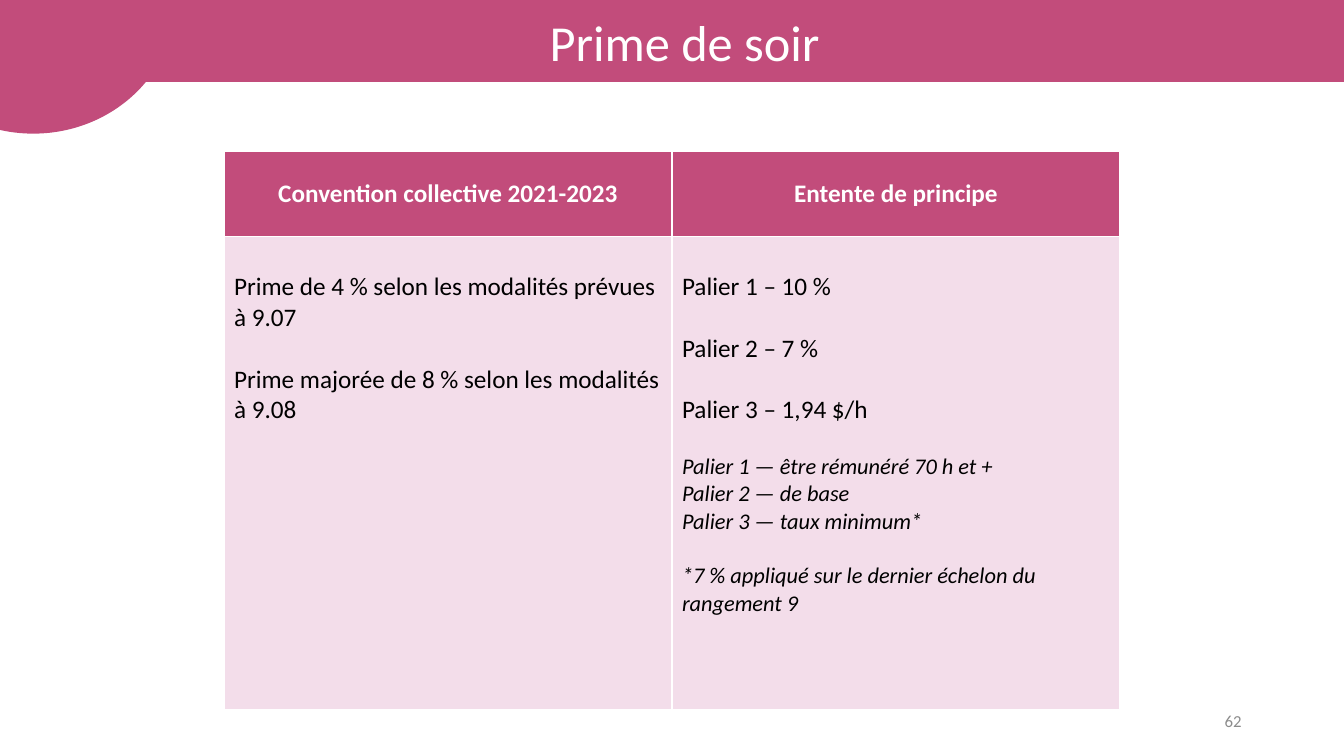
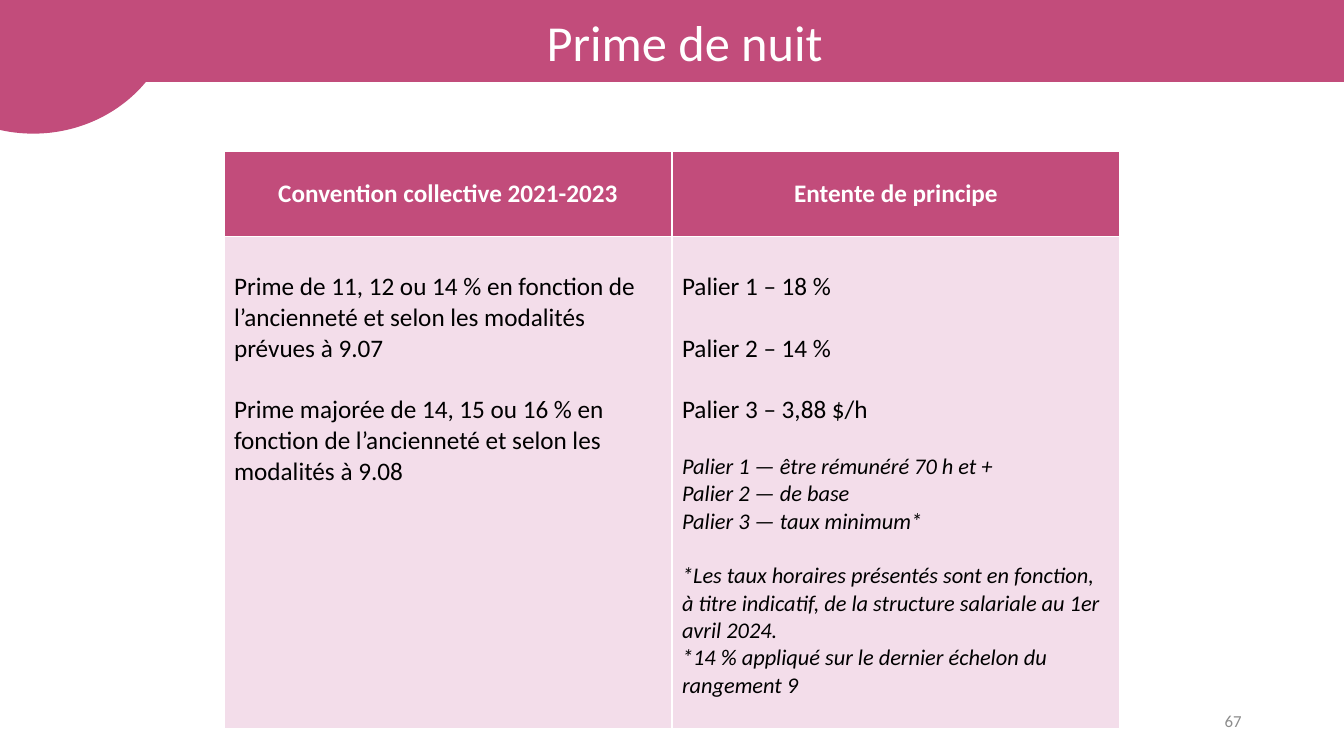
from pptx import Presentation
from pptx.dml.color import RGBColor
from pptx.enum.shapes import MSO_SHAPE
from pptx.enum.text import MSO_ANCHOR, MSO_AUTO_SIZE, PP_ALIGN
from pptx.util import Cm, Pt

ROSE = RGBColor(0xC2, 0x4C, 0x7B)
PALE_ROSE = RGBColor(0xF3, 0xDD, 0xEA)
WHITE = RGBColor(0xFF, 0xFF, 0xFF)
BLACK = RGBColor(0, 0, 0)
GREY = RGBColor(0x8C, 0x8C, 0x8C)
FONT = "Calibri"
SLIDE_WIDTH, SLIDE_HEIGHT = Cm(33.87), Cm(19.05)

TITLE_ONLY = 5
TERM_SIZE, NOTE_SIZE = 18, 16
TERM_GAP, NOTE_GAP = Pt(22), Pt(19.5)

HEADINGS = ("Convention collective 2021-2023", "Entente de principe")
TIER_NOTES = (
    "Palier 1 — être rémunéré 70 h et +",
    "Palier 2 — de base",
    "Palier 3 — taux minimum*",
)

# One entry per slide
PREMIUMS = (
    {
        "title": "Prime de soir",
        "number": "62",
        "body_height": Cm(11.92),
        "current": (
            "Prime de 4 % selon les modalités prévues à 9.07",
            "Prime majorée de 8 % selon les modalités à 9.08",
        ),
        "tiers": ("Palier 1 – 10 %", "Palier 2 – 7 %", "Palier 3 – 1,94 $/h"),
        "remarks": ("*7 % appliqué sur le dernier échelon du rangement 9",),
    },
    {
        "title": "Prime de nuit",
        "number": "67",
        "body_height": Cm(12.4),
        "current": (
            "Prime de 11, 12 ou 14 % en fonction de l’ancienneté et selon les modalités prévues à 9.07",
            "Prime majorée de 14, 15 ou 16 % en fonction de l’ancienneté et selon les modalités à 9.08",
        ),
        "tiers": ("Palier 1 – 18 %", "Palier 2 – 14 %", "Palier 3 – 3,88 $/h"),
        "remarks": (
            "*Les taux horaires présentés sont en fonction, à titre indicatif, "
            "de la structure salariale au 1er avril 2024.",
            "*14 % appliqué sur le dernier échelon du rangement 9",
        ),
    },
)


def style(paragraph, size, color, bold=False, italic=False, align=PP_ALIGN.LEFT):
    font = paragraph.font
    font.name, font.size, font.color.rgb = FONT, Pt(size), color
    font.bold, font.italic = bold, italic
    paragraph.alignment = align


def paint(shape):
    shape.fill.solid()
    shape.fill.fore_color.rgb = ROSE
    shape.line.color.rgb = ROSE
    shape.line.width = Pt(1)


def add_header(slide, title_text, width, height):
    # Title band
    title = slide.shapes.title
    title.left, title.top, title.width, title.height = 0, 0, width, height
    paint(title)
    frame = title.text_frame
    frame.text = title_text
    frame.auto_size = MSO_AUTO_SIZE.NONE
    frame.vertical_anchor = MSO_ANCHOR.MIDDLE
    frame.margin_left, frame.margin_right = Cm(0.89), Cm(0.25)
    style(frame.paragraphs[0], 36, WHITE, align=PP_ALIGN.CENTER)

    # Round corner ornament
    corner = slide.shapes.add_shape(
        MSO_SHAPE.OVAL, Cm(-2.74), Cm(-3.38), Cm(7.16), Cm(6.73))
    corner.shadow.inherit = False
    paint(corner)


def add_page_number(slide, number, left, top, width, height):
    frame = slide.shapes.add_textbox(left, top, width, height).text_frame
    frame.word_wrap = True
    frame.vertical_anchor = MSO_ANCHOR.MIDDLE
    frame.text = number
    style(frame.paragraphs[0], 12, GREY, align=PP_ALIGN.RIGHT)


def fill_cell(cell, lines, color):
    cell.fill.solid()
    cell.fill.fore_color.rgb = color
    cell.text_frame.text = "\n".join(lines)
    return cell.text_frame.paragraphs


def add_comparison(slide, premium, left, top, width, header_height):
    body_height = premium["body_height"]
    table = slide.shapes.add_table(
        2, 2, left, top, width, header_height + body_height).table
    table.rows[0].height, table.rows[1].height = header_height, body_height

    # Headings
    for column, heading in enumerate(HEADINGS):
        cell = table.cell(0, column)
        cell.vertical_anchor = MSO_ANCHOR.MIDDLE
        style(fill_cell(cell, [heading], ROSE)[0], TERM_SIZE, WHITE,
              bold=True, align=PP_ALIGN.CENTER)

    # Terms, followed by notes in italics
    notes = TIER_NOTES + premium["remarks"]
    columns = ((premium["current"], ()), (premium["tiers"], notes))
    for column, (terms, cell_notes) in enumerate(columns):
        cell = table.cell(1, column)
        cell.margin_top = Cm(0.9)
        paragraphs = fill_cell(cell, terms + cell_notes, PALE_ROSE)
        for index, paragraph in enumerate(paragraphs):
            is_note = index >= len(terms)
            style(paragraph, NOTE_SIZE if is_note else TERM_SIZE, BLACK,
                  italic=is_note)
            if 0 < index < len(terms):
                paragraph.space_before = TERM_GAP
            elif index in (len(terms), len(terms) + len(TIER_NOTES)):
                paragraph.space_before = NOTE_GAP


def add_premium_slide(deck, premium):
    slide = deck.slides.add_slide(deck.slide_layouts[TITLE_ONLY])
    add_header(slide, premium["title"], SLIDE_WIDTH, Cm(2.06))
    add_page_number(slide, premium["number"], Cm(23.92), Cm(17.65), Cm(7.62), Cm(1.02))
    table_width = Cm(22.58)
    add_comparison(slide, premium, (SLIDE_WIDTH - table_width) // 2, Cm(3.81),
                   table_width, Cm(2.14))


def main():
    deck = Presentation()
    deck.slide_width, deck.slide_height = SLIDE_WIDTH, SLIDE_HEIGHT
    for premium in PREMIUMS:
        add_premium_slide(deck, premium)
    deck.save("out.pptx")


if __name__ == "__main__":
    main()
